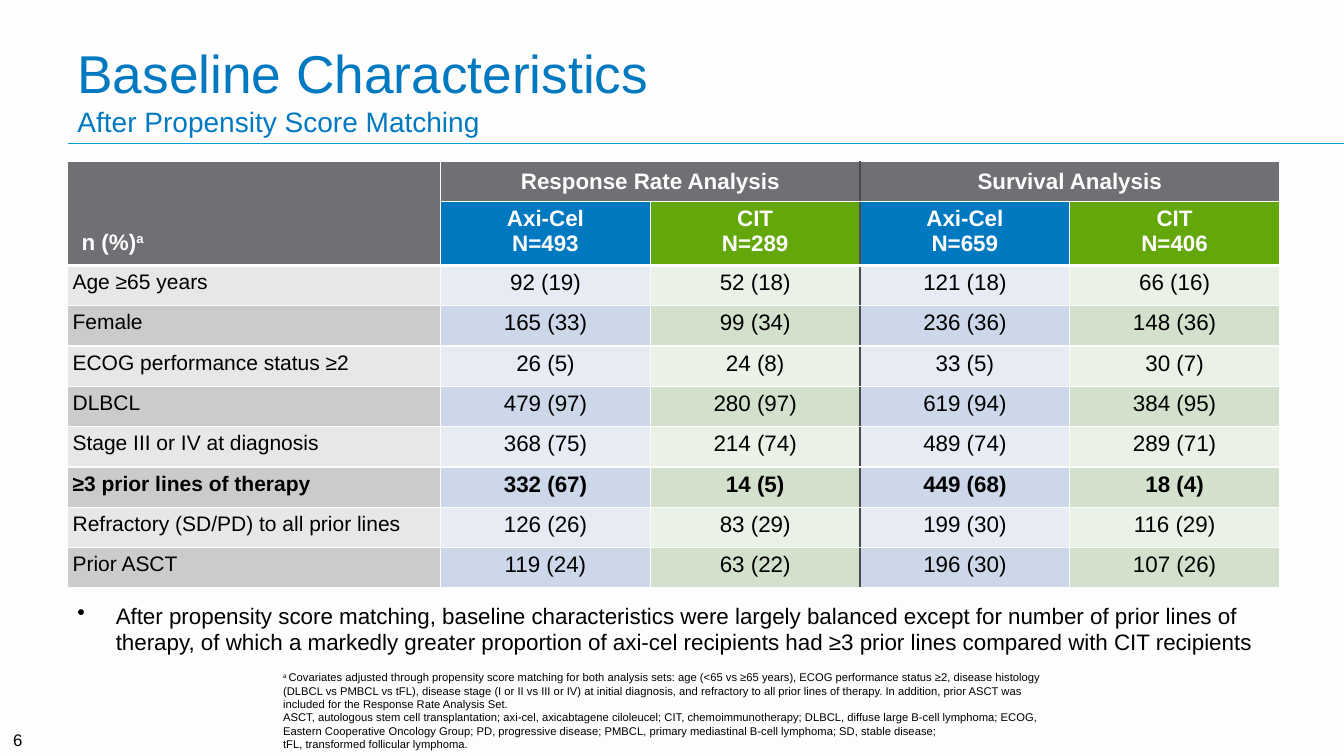
import pptx
import pptx.dml.color
import pptx.enum.shapes
import pptx.enum.text
import pptx.oxml.ns
import pptx.util
from lxml import etree

Inches, Pt = pptx.util.Inches, pptx.util.Pt
RGBColor = pptx.dml.color.RGBColor
ALIGN, ANCHOR = pptx.enum.text.PP_ALIGN, pptx.enum.text.MSO_ANCHOR
qn = pptx.oxml.ns.qn

BLACK = RGBColor(0x00, 0x00, 0x00)
PAPER = RGBColor(0xFD, 0xFD, 0xFD)
BLUE = RGBColor(0x00, 0x79, 0xC1)
SKY = RGBColor(0x00, 0xA0, 0xDD)
GREEN = RGBColor(0x63, 0xA7, 0x0A)
GREY = RGBColor(0x6F, 0x70, 0x73)
DIVIDER = RGBColor(0x4A, 0x4B, 0x4D)
LIGHT_BAND = [RGBColor(0xE7, 0xE7, 0xE7), RGBColor(0xE7, 0xEC, 0xF4), RGBColor(0xEA, 0xF1, 0xE7)]
DARK_BAND = [RGBColor(0xCB, 0xCB, 0xCB), RGBColor(0xCC, 0xD7, 0xE9), RGBColor(0xD3, 0xE1, 0xCC)]

ANALYSES = ["Response Rate Analysis", "Survival Analysis"]
ARMS = ["Axi-Cel\nN=493", "CIT\nN=289", "Axi-Cel\nN=659", "CIT\nN=406"]
BOLD_ROW = "≥3 prior lines of therapy"
CHARACTERISTICS = [
    ("Age ≥65 years", "92 (19)", "52 (18)", "121 (18)", "66 (16)"),
    ("Female", "165 (33)", "99 (34)", "236 (36)", "148 (36)"),
    ("ECOG performance status ≥2", "26 (5)", "24 (8)", "33 (5)", "30 (7)"),
    ("DLBCL", "479 (97)", "280 (97)", "619 (94)", "384 (95)"),
    ("Stage III or IV at diagnosis", "368 (75)", "214 (74)", "489 (74)", "289 (71)"),
    (BOLD_ROW, "332 (67)", "14 (5)", "449 (68)", "18 (4)"),
    ("Refractory (SD/PD) to all prior lines", "126 (26)", "83 (29)", "199 (30)", "116 (29)"),
    ("Prior ASCT", "119 (24)", "63 (22)", "196 (30)", "107 (26)"),
]
HEADER_ROWS = 2
DIVIDER_COL = 3  # first column of the survival analysis

SUMMARY = (
    "After propensity score matching, baseline characteristics were largely balanced except for "
    "number of prior lines of therapy, of which a markedly greater proportion of axi-cel recipients "
    "had ≥3 prior lines compared with CIT recipients")
COVARIATES = (
    "Covariates adjusted through propensity score matching for both analysis sets: age (<65 vs ≥65 "
    "years), ECOG performance status ≥2, disease histology (DLBCL vs PMBCL vs tFL), disease stage "
    "(I or II vs III or IV) at initial diagnosis, and refractory to all prior lines of therapy. "
    "In addition, prior ASCT was \nincluded for the Response Rate Analysis Set.")
ABBREVIATIONS = (
    "ASCT, autologous stem cell transplantation; axi-cel, axicabtagene ciloleucel; CIT, "
    "chemoimmunotherapy; DLBCL, diffuse large B-cell lymphoma; ECOG, Eastern Cooperative Oncology "
    "Group; PD, progressive disease; PMBCL, primary mediastinal B-cell lymphoma; SD, stable "
    "disease; \ntFL, transformed follicular lymphoma.")


def add_text(p, text, size=16, color=BLACK, bold=False, superscript=False):
    """Append text to a paragraph; a newline becomes a line break."""
    for i, line in enumerate(text.split("\n")):
        if i:
            p.add_line_break()
        if not line:
            continue
        r = p.add_run()
        r.text = line
        r.font.name = "Arial"
        r.font.size = Pt(size)
        r.font.bold = bold
        r.font.color.rgb = color
        if superscript:
            r.font._element.set("baseline", "30000")


class SlideBuilder:
    def __init__(self, prs):
        self.slide = prs.slides.add_slide(prs.slide_layouts[6])
        self.slide.background.fill.solid()
        self.slide.background.fill.fore_color.rgb = PAPER

    def text_box(self, left, top, width, height, anchor=ANCHOR.TOP):
        sp = self.slide.shapes.add_textbox(Inches(left), Inches(top), Inches(width), Inches(height))
        tf = sp.text_frame
        tf.word_wrap = True
        tf.vertical_anchor = anchor
        return tf

    def rule(self, x1, y1, x2, y2):
        line = self.slide.shapes.add_connector(
            pptx.enum.shapes.MSO_CONNECTOR.STRAIGHT, Inches(x1), Inches(y1), Inches(x2), Inches(y2))
        line.line.color.rgb = SKY
        line.line.width = Pt(0.75)
        etree.SubElement(line._element.spPr, qn("a:effectLst"))

    def bullet(self, tf, text):
        p = tf.paragraphs[0]
        pPr = p._p.get_or_add_pPr()
        pPr.set("marL", str(Inches(0.38)))
        pPr.set("indent", str(-Inches(0.38)))
        etree.SubElement(pPr, qn("a:buChar"), char="•")
        add_text(p, text)

    def table(self, left, top, widths, heights):
        table = self.slide.shapes.add_table(
            len(heights), len(widths), Inches(left), Inches(top),
            Inches(sum(widths)), Inches(sum(heights))).table
        for column, width in zip(table.columns, widths):
            column.width = Inches(width)
        for row, height in zip(table.rows, heights):
            row.height = Inches(height)
        return table

    def cell(self, table, row, col, text, fill, align=ALIGN.CENTER, anchor=ANCHOR.TOP,
             margins=(0.05, 0.05, 0.05, 0.05), **font):
        cell = table.cell(row, col)
        cell.fill.solid()
        cell.fill.fore_color.rgb = fill
        cell.vertical_anchor = anchor
        cell.margin_left, cell.margin_top, cell.margin_right, cell.margin_bottom = map(Inches, margins)
        p = cell.text_frame.paragraphs[0]
        p.alignment = align
        add_text(p, text, **font)
        self.borders(cell, row, col)
        return p

    def borders(self, cell, row, col):
        """Draw cell edges, with a dark divider and a thick line under the header."""
        next_row, next_col = row + cell.span_height, col + cell.span_width
        edges = [("lnL", col == DIVIDER_COL, False), ("lnR", next_col == DIVIDER_COL, False),
                 ("lnT", False, row == HEADER_ROWS), ("lnB", False, next_row == HEADER_ROWS)]
        tcPr = cell._tc.get_or_add_tcPr()
        for i, (tag, dark, thick) in enumerate(edges):
            ln = etree.Element(qn("a:" + tag), w=str(Pt(2.25 if thick else 1)))
            solid = etree.SubElement(ln, qn("a:solidFill"))
            etree.SubElement(solid, qn("a:srgbClr"), val=str(DIVIDER if dark else PAPER))
            tcPr.insert(i, ln)


def add_characteristics_table(s):
    table = s.table(0.67, 1.6, [3.7] + [2.08] * 4, [0.4, 0.6] + [0.4] * len(CHARACTERISTICS))
    table.cell(0, 0).merge(table.cell(1, 0))
    header = {"color": PAPER, "bold": True}
    p = s.cell(table, 0, 0, "n (%)", GREY, align=ALIGN.LEFT, anchor=ANCHOR.BOTTOM,
               margins=(0.14, 0.1, 0.02, 0.1), **header)
    add_text(p, "a", superscript=True, **header)
    for i, analysis in enumerate(ANALYSES):
        col = 1 + 2 * i
        table.cell(0, col).merge(table.cell(0, col + 1))
        s.cell(table, 0, col, analysis, GREY, anchor=ANCHOR.MIDDLE,
               margins=(0.02, 0, 0.02, 0), **header)
    for col, arm in enumerate(ARMS, 1):
        s.cell(table, 1, col, arm, BLUE if col % 2 else GREEN, **header)
    for row, (label, *counts) in enumerate(CHARACTERISTICS, HEADER_ROWS):
        label_fill, axi_fill, cit_fill = DARK_BAND if row % 2 else LIGHT_BAND
        bold = label == BOLD_ROW
        s.cell(table, row, 0, label, label_fill, align=ALIGN.LEFT, size=15, bold=bold)
        for col, count in enumerate(counts, 1):
            s.cell(table, row, col, count, axi_fill if col % 2 else cit_fill, bold=bold)


def main():
    prs = pptx.Presentation()
    prs.slide_width, prs.slide_height = Inches(13.33), Inches(7.5)
    s = SlideBuilder(prs)

    s.rule(0.67, 1.42, 13.33, 1.42)
    title = s.text_box(0.67, 0.3, 12, 1.12, ANCHOR.BOTTOM).paragraphs[0]
    add_text(title, "Baseline Characteristics\n", size=38, color=BLUE)
    add_text(title, "After Propensity Score Matching", size=20, color=BLUE)

    number = s.text_box(0, 7.17, 0.32, 0.4 - 0.07, ANCHOR.MIDDLE).paragraphs[0]
    number.alignment = ALIGN.RIGHT
    add_text(number, "6", size=12)

    add_characteristics_table(s)

    footnote = s.text_box(2.71, 6.53, 8.1, 0.97, ANCHOR.BOTTOM)
    add_text(footnote.paragraphs[0], "a ", size=8, superscript=True)
    add_text(footnote.paragraphs[0], COVARIATES, size=8)
    add_text(footnote.add_paragraph(), ABBREVIATIONS, size=8)

    s.bullet(s.text_box(0.67, 5.92, 12, 0.65), SUMMARY)
    prs.save("out.pptx")


if __name__ == "__main__":
    main()
